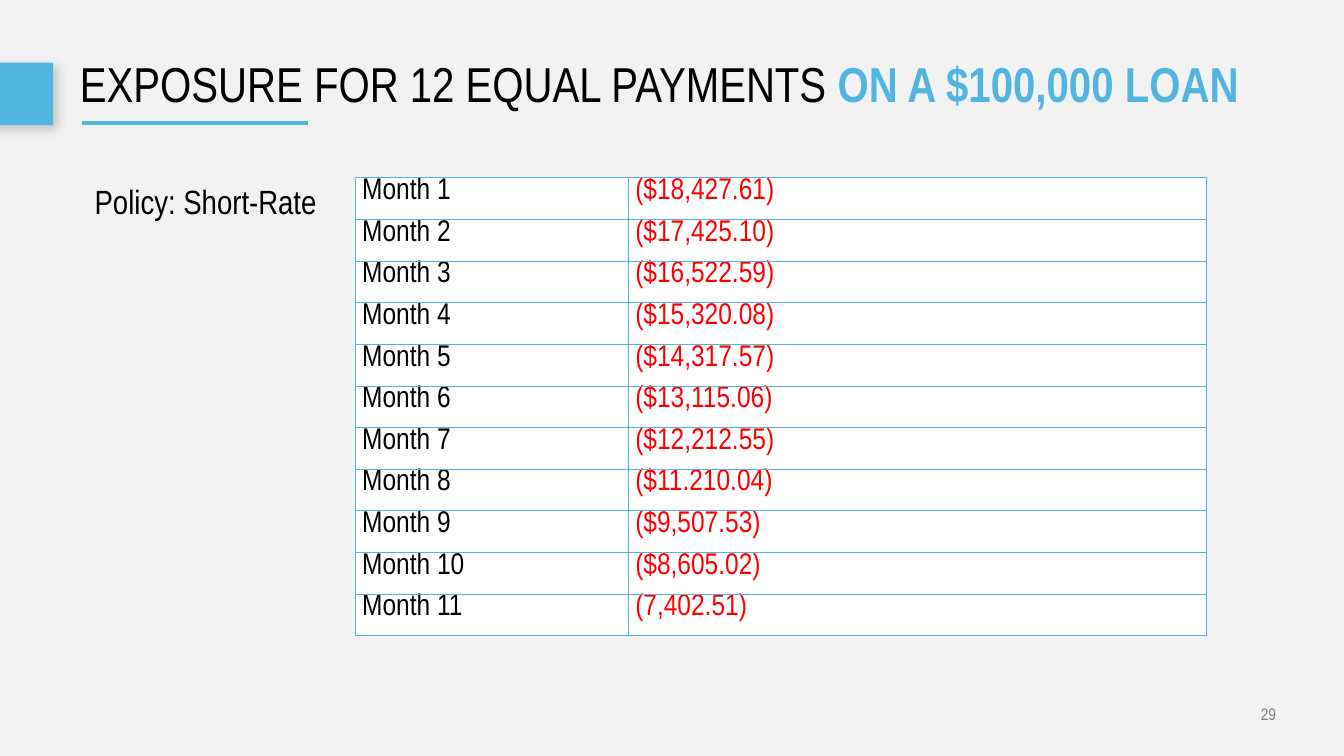
import lxml.etree
import pptx
import pptx.dml.color
import pptx.enum.shapes
import pptx.enum.text
import pptx.oxml.ns
import pptx.util

Pt = pptx.util.Pt
ALIGN = pptx.enum.text.PP_ALIGN
MIDDLE = pptx.enum.text.MSO_ANCHOR.MIDDLE
FONT = "Arial Narrow"
COLOURS = {
    "background": "F2F2F2",
    "accent": "52B6E0",
    "highlight": "51B5E0",
    "text": "000000",
    "loss": "FF0000",
    "number": "808084",
    "cell": "FFFFFF",
}
EXPOSURES = [
    "($18,427.61)", "($17,425.10)", "($16,522.59)", "($15,320.08)",
    "($14,317.57)", "($13,115.06)", "($12,212.55)", "($11.210.04)",
    "($9,507.53)", "($8,605.02)", "(7,402.51)",
]


def colour(name):
    return pptx.dml.color.RGBColor.from_string(COLOURS[name])


def add_element(parent, tag, **attributes):
    return lxml.etree.SubElement(parent, pptx.oxml.ns.qn(tag), attributes)


def add_run(paragraph, text, size, colour_name, bold=False):
    run = paragraph.add_run()
    run.text = text
    run.font.name = FONT
    run.font.size = Pt(size)
    run.font.bold = bold
    run.font.color.rgb = colour(colour_name)


def clear_margins(frame):
    frame.margin_left = frame.margin_right = 0
    frame.margin_top = frame.margin_bottom = 0


def add_title(slide):
    title = slide.shapes.title
    title.left, title.top, title.width, title.height = Pt(85.7), Pt(42.5), Pt(1281.6), Pt(101.5)
    frame = title.text_frame
    clear_margins(frame)
    frame.word_wrap = True
    frame.auto_size = pptx.enum.text.MSO_AUTO_SIZE.NONE
    frame.vertical_anchor = MIDDLE
    paragraph = frame.paragraphs[0]
    paragraph.alignment = ALIGN.LEFT
    paragraph.line_spacing = 0.9
    add_run(paragraph, "EXPOSURE FOR 12 EQUAL PAYMENTS ", 52.5, "text")
    add_run(paragraph, "ON A $100,000 LOAN", 52.5, "highlight", bold=True)


def add_side_tab(slide):
    tab = slide.shapes.add_shape(
        pptx.enum.shapes.MSO_SHAPE.RECTANGLE, Pt(-36.7), Pt(67), Pt(93.6), Pt(67))
    tab.fill.solid()
    tab.fill.fore_color.rgb = colour("accent")
    tab.line.fill.background()
    # Soft shadow towards the lower right
    tab.shadow.inherit = False
    effects = tab.element.spPr.find(pptx.oxml.ns.qn("a:effectLst"))
    shadow = add_element(effects, "a:outerShdw", blurRad=str(Pt(12)), dist=str(Pt(7)),
                         dir="2700000", algn="tl", rotWithShape="0")
    black = add_element(shadow, "a:srgbClr", val=COLOURS["text"])
    add_element(black, "a:alpha", val="20000")


def add_underline(slide):
    line = slide.shapes.add_connector(
        pptx.enum.shapes.MSO_CONNECTOR.STRAIGHT, Pt(87.8), Pt(131.8), Pt(330.5), Pt(131.8))
    line.line.color.rgb = colour("accent")
    line.line.width = Pt(5)
    add_element(line.element.spPr, "a:effectLst")


def add_label(slide, left, top, width, height, text, size, colour_name):
    box = slide.shapes.add_textbox(Pt(left), Pt(top), Pt(width), Pt(height))
    frame = box.text_frame
    frame.word_wrap = True
    add_run(frame.paragraphs[0], text, size, colour_name)
    return frame


def set_borders(cell):
    properties = cell._tc.get_or_add_tcPr()
    for index, side in enumerate(("a:lnL", "a:lnR", "a:lnT", "a:lnB")):
        border = add_element(properties, side, w=str(Pt(1)))
        fill = add_element(border, "a:solidFill")
        add_element(fill, "a:srgbClr", val=COLOURS["highlight"])
        # Borders have to stand before the cell fill
        properties.insert(index, border)


def fill_cell(cell, text, colour_name):
    cell.fill.solid()
    cell.fill.fore_color.rgb = colour("cell")
    cell.margin_left = cell.margin_right = Pt(7.2)
    cell.margin_top = cell.margin_bottom = 0
    add_run(cell.text_frame.paragraphs[0], text, 32, colour_name)
    set_borders(cell)


def add_exposure_table(slide):
    row_height = 44.6
    column_widths = (292.6, 619.6)
    table = slide.shapes.add_table(
        len(EXPOSURES), len(column_widths), Pt(380.9), Pt(190.6),
        Pt(sum(column_widths)), Pt(row_height * len(EXPOSURES))).table
    table.first_row = table.horz_banding = False
    for column, width in zip(table.columns, column_widths):
        column.width = Pt(width)
    for index, exposure in enumerate(EXPOSURES):
        table.rows[index].height = Pt(row_height)
        fill_cell(table.cell(index, 0), f"Month {index + 1}", "text")
        fill_cell(table.cell(index, 1), exposure, "loss")


def main():
    presentation = pptx.Presentation()
    presentation.slide_width, presentation.slide_height = Pt(1440), Pt(810)
    slide = presentation.slides.add_slide(presentation.slide_layouts[5])
    slide.background.fill.solid()
    slide.background.fill.fore_color.rgb = colour("background")

    # Heading
    add_side_tab(slide)
    add_underline(slide)
    add_title(slide)

    # Policy and monthly exposure
    add_exposure_table(slide)
    add_label(slide, 94.3, 190.8, 277.9, 51.1, "Policy: Short-Rate", 36, "text")

    # Page number
    number = add_label(slide, 1043.3, 751, 324, 27.4, "29", 18, "number")
    clear_margins(number)
    number.vertical_anchor = MIDDLE
    number.paragraphs[0].alignment = ALIGN.RIGHT

    presentation.save("out.pptx")


if __name__ == "__main__":
    main()
